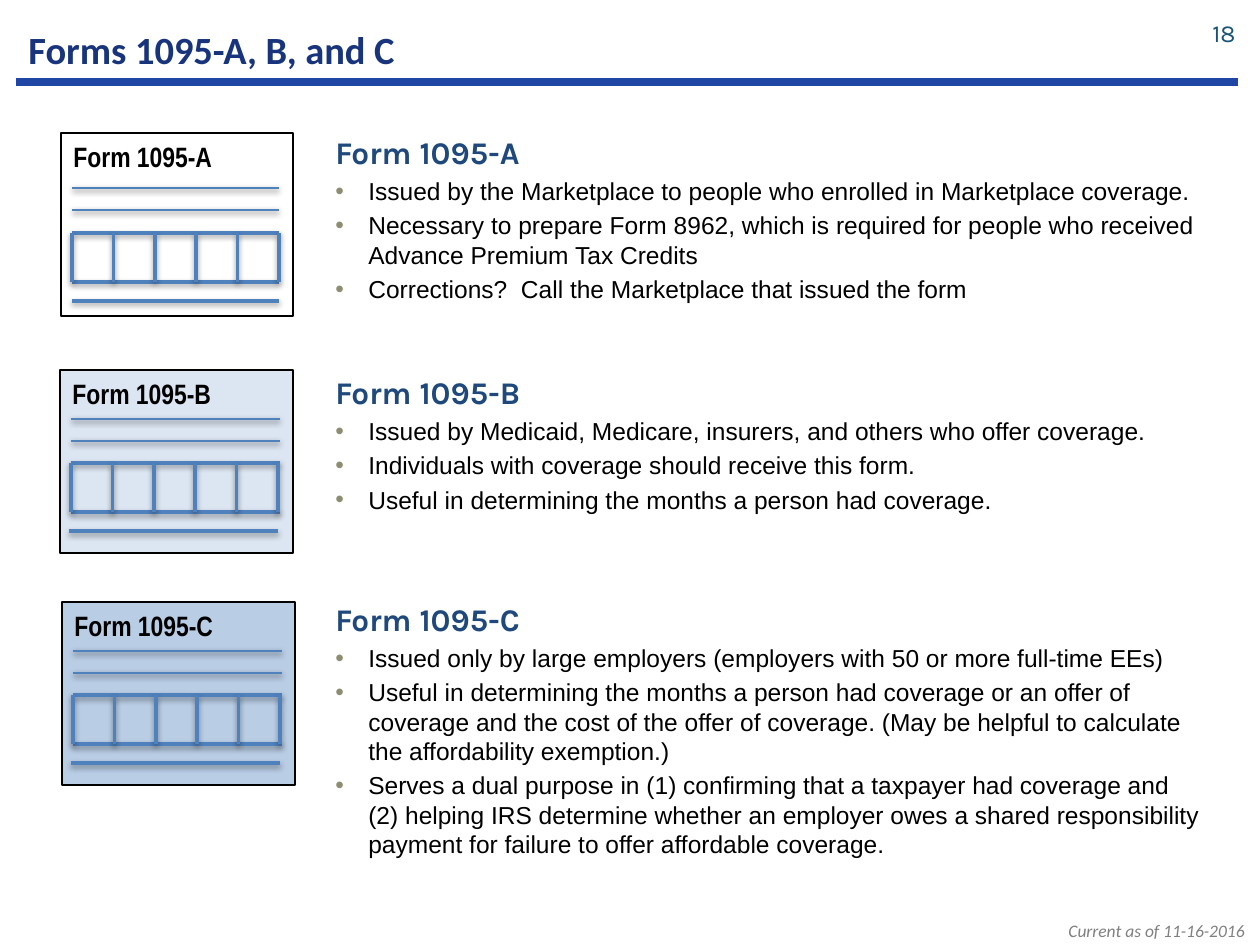
"""Build the slide that compares Forms 1095-A, B and C."""
from lxml import etree
from pptx import Presentation
from pptx.dml.color import RGBColor
from pptx.enum.shapes import MSO_CONNECTOR as Conn, MSO_SHAPE as Shape
from pptx.enum.text import MSO_ANCHOR as Anchor, PP_ALIGN as Align
from pptx.oxml.ns import qn
from pptx.util import Emu, Pt

FORMS = [
    {"name": "Form 1095-A", "fill": None, "card": (61, 133, 232, 183),
     "rows": (55, 77, 100, 149, 168), "wide": 207, "shift": 0,
     "text": (323, 127, 896, 188), "points": [
         "Issued by the Marketplace to people who enrolled in Marketplace coverage.",
         "Necessary to prepare Form 8962, which is required for people who received "
         "Advance Premium Tax Credits",
         "Corrections?  Call the Marketplace that issued the form"]},
    {"name": "Form 1095-B", "fill": "DCE6F2", "card": (60, 370, 233, 183),
     "rows": (49, 71, 93, 142, 161), "wide": 209, "shift": -2,
     "text": (323, 367, 896, 158), "points": [
         "Issued by Medicaid, Medicare, insurers, and others who offer coverage.",
         "Individuals with coverage should receive this form.",
         "Useful in determining the months a person had coverage."]},
    {"name": "Form 1095-C", "fill": "B9CDE5", "card": (62, 602, 233, 183),
     "rows": (49, 71, 93, 142, 161), "wide": 209, "shift": -2,
     "text": (323, 594, 896, 276), "points": [
         "Issued only by large employers (employers with 50 or more full-time EEs)",
         "Useful in determining the months a person had coverage or an offer of "
         "coverage and the cost of the offer of coverage. (May be helpful to "
         "calculate the affordability exemption.)",
         "Serves a dual purpose in (1) confirming that a taxpayer had coverage and (2) "
         "helping IRS determine whether an employer owes a shared responsibility "
         "payment for failure to offer affordable coverage."]},
]
LABELS = [
    ("Current as of 11-16-2016", (752, 914, 505, 34), Align.RIGHT, Anchor.TOP,
     ("Calibri", 10, "808080", False, True)),
    ("Forms 1095-A, B, and C", (16, 13, 1134, 72), Align.LEFT, Anchor.MIDDLE,
     ("Calibri", 22, "18347C", True)),
    ("18", (1184, 8, 64, 50), Align.RIGHT, Anchor.MIDDLE,
     ("Karla", 14, "175475")),
]
CELLS, GRID, INSET, INDENT = 5, 207, 11, 33


def px(num):
    return Emu(round(num * 914400 / 126))


def color(code):
    return RGBColor.from_string(code)


def style(para, face, size, code, bold=False, ital=False):
    font = para.font
    font.name, font.size, font.bold, font.italic = face, Pt(size), bold, ital
    font.color.rgb = color(code)


def text_box(box, anchor=Anchor.TOP):
    frame = shapes.add_textbox(*map(px, box)).text_frame
    frame.word_wrap = True
    frame.vertical_anchor = anchor
    return frame


def add_line(x1, y1, x2, y2, code, width, shade=True):
    line = shapes.add_connector(Conn.STRAIGHT, *map(px, (x1, y1, x2, y2)))
    line.line.color.rgb = color(code)
    line.line.width = Pt(width)
    fx = etree.SubElement(line._element.spPr, qn("a:effectLst"))
    if shade:
        cast = etree.SubElement(fx, qn("a:outerShdw"), blurRad="40000", dist="20000",
                                dir="5400000", rotWithShape="0")
        tone = etree.SubElement(cast, qn("a:srgbClr"), val="000000")
        etree.SubElement(tone, qn("a:alpha"), val="38000")


def add_card(form):
    left, top, wide, high = form["card"]
    card = shapes.add_shape(Shape.RECTANGLE, *map(px, (left, top, wide, high)))
    card.shadow.inherit = False
    if form["fill"]:
        card.fill.solid()
        card.fill.fore_color.rgb = color(form["fill"])
    else:
        card.fill.background()
    card.line.color.rgb = color("000000")
    card.line.width = Pt(1.5)
    frame = card.text_frame
    frame.text = form["name"]
    frame.vertical_anchor = Anchor.TOP
    para = frame.paragraphs[0]
    para.alignment = Align.LEFT
    style(para, "Arial Narrow", 16, "000000", True)

    x = left + INSET
    rows = [top + gap for gap in form["rows"]]
    for i, y in enumerate(rows):
        start = x + (form["shift"] if i == len(rows) - 1 else 0)
        add_line(start, y, start + form["wide"], y, "4F81BD", 1.5 if i < 2 else 2)
    for i in range(CELLS + 1):
        col = x + i * GRID / CELLS
        add_line(col, rows[2], col, rows[3], "4F81BD", 2)


def add_notes(form):
    frame = text_box(form["text"])
    frame.text = form["name"]
    style(frame.paragraphs[0], "Karla", 18, "1F497D", True)
    for point in form["points"]:
        para = frame.add_paragraph()
        para.text = point
        props = para._p.get_or_add_pPr()
        props.set("marL", str(px(INDENT)))
        props.set("indent", str(-px(INDENT)))
        tint = etree.SubElement(props, qn("a:buClr"))
        etree.SubElement(tint, qn("a:srgbClr"), val="8D8D72")
        etree.SubElement(props, qn("a:buFont"), typeface="Arial")
        etree.SubElement(props, qn("a:buChar"), char="•")
        para.space_before = Pt(2.8)
        style(para, "Arial", 14, "000000")


deck = Presentation()
deck.slide_width, deck.slide_height = px(1260), px(945)
shapes = deck.slides.add_slide(deck.slide_layouts[6]).shapes

add_line(16, 82, 1238, 82, "2046A5", 4.75, False)
for words, box, align, anchor, look in LABELS:
    frame = text_box(box, anchor)
    frame.text = words
    frame.paragraphs[0].alignment = align
    style(frame.paragraphs[0], *look)
for form in FORMS:
    add_card(form)
    add_notes(form)

deck.save("out.pptx")
